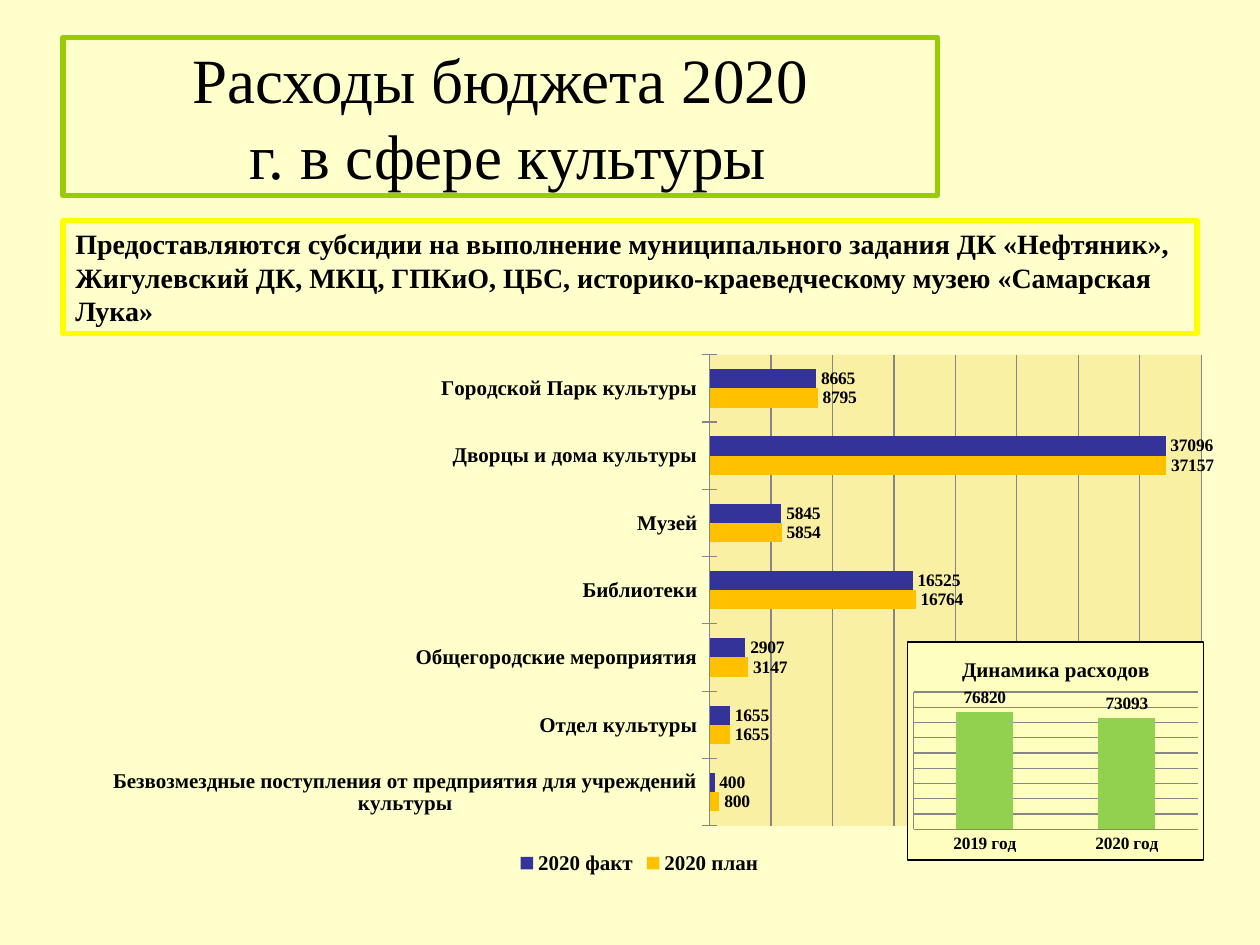
from lxml import etree
from pptx import Presentation
from pptx.chart.data import CategoryChartData
from pptx.dml.color import RGBColor
from pptx.enum.chart import XL_CHART_TYPE, XL_LABEL_POSITION, XL_LEGEND_POSITION, XL_TICK_LABEL_POSITION, XL_TICK_MARK
from pptx.enum.text import MSO_ANCHOR, PP_ALIGN
from pptx.oxml import parse_xml
from pptx.oxml.ns import nsdecls, qn
from pptx.util import Inches, Pt

BAR, COLUMN = XL_CHART_TYPE.BAR_CLUSTERED, XL_CHART_TYPE.COLUMN_CLUSTERED
OUTSIDE_END = XL_LABEL_POSITION.OUTSIDE_END
BOTTOM = XL_LEGEND_POSITION.BOTTOM
NO_LABELS = XL_TICK_LABEL_POSITION.NONE
CROSS, NO_TICK = XL_TICK_MARK.CROSS, XL_TICK_MARK.NONE
TOP, MIDDLE = MSO_ANCHOR.TOP, MSO_ANCHOR.MIDDLE
LEFT, CENTER = PP_ALIGN.LEFT, PP_ALIGN.CENTER

FONT = "Times New Roman"
BLACK = RGBColor(0x00, 0x00, 0x00)
CREAM = RGBColor(0xFF, 0xFF, 0xCC)
GREEN = RGBColor(0x99, 0xCC, 0x00)
YELLOW = RGBColor(0xFF, 0xFF, 0x00)
GRAY = RGBColor(0x86, 0x86, 0x86)
PLOT_SAND = RGBColor(0xFA, 0xF0, 0xA4)
AMBER = RGBColor(0xFF, 0xC0, 0x00)
INDIGO = RGBColor(0x33, 0x33, 0x99)
PALE_YELLOW = RGBColor(0xFE, 0xFE, 0xBE)
LIGHT_GREEN = RGBColor(0x92, 0xD0, 0x50)


def fill_box(shape, lines, size, bold, align, anchor, border):
    shape.line.color.rgb = border
    shape.line.width = Pt(3)
    frame = shape.text_frame
    frame.word_wrap = True
    frame.vertical_anchor = anchor
    paragraph = frame.paragraphs[0]
    paragraph.alignment = align
    for index, line in enumerate(lines):
        if index:
            paragraph.add_line_break()
        run = paragraph.add_run()
        run.text = line
        run.font.name = FONT
        run.font.size = Pt(size)
        run.font.bold = bold
        run.font.color.rgb = BLACK


def add_budget_chart(kind, box, categories, series, layout, maximum, step):
    data = CategoryChartData(number_format="0")
    data.categories = categories
    for name, values, color in series:
        data.add_series(name, values)
    chart = slide.shapes.add_chart(kind, *map(Inches, box), data).chart
    chart.font.name = FONT
    chart.font.size = Pt(10)
    chart.font.color.rgb = BLACK
    chart.has_legend = False
    chart.has_title = False
    plot = chart.plots[0]
    plot.gap_width = 150
    plot.overlap = 0
    plot.vary_by_categories = False
    for plot_series, (name, values, color) in zip(plot.series, series):
        plot_series.format.fill.solid()
        plot_series.format.fill.fore_color.rgb = color
        labels = plot_series.data_labels
        labels.show_value = True
        labels.position = OUTSIDE_END
        labels.font.bold = True
        labels.font.size = Pt(10)
    value_axis = chart.value_axis
    value_axis.minimum_scale = 0
    value_axis.maximum_scale = maximum
    value_axis.major_unit = step
    value_axis.has_major_gridlines = True
    category_axis = chart.category_axis
    category_axis.tick_labels.font.bold = True
    for line_format in (value_axis.format, category_axis.format, value_axis.major_gridlines.format):
        line_format.line.color.rgb = GRAY
        line_format.line.width = Pt(0.75)
    plot_area = chart.element.find(".//" + qn("c:plotArea"))
    for old_layout in plot_area.findall(qn("c:layout")):
        plot_area.remove(old_layout)
    manual_layout = parse_xml(
        f'<c:layout {nsdecls("c")}><c:manualLayout><c:layoutTarget val="inner"/>'
        '<c:xMode val="edge"/><c:yMode val="edge"/></c:manualLayout></c:layout>')
    for tag, value in zip("xywh", layout):
        etree.SubElement(manual_layout[0], qn("c:" + tag)).set("val", str(value))
    plot_area.insert(0, manual_layout)
    return chart


presentation = Presentation()
presentation.slide_width = Inches(10)
presentation.slide_height = Inches(7.5)
slide = presentation.slides.add_slide(presentation.slide_layouts[5])
slide.background.fill.solid()
slide.background.fill.fore_color.rgb = CREAM

title = slide.shapes.title
title.left, title.top, title.width, title.height = map(Inches, (0.5, 0.3, 6.94, 1.25))
fill_box(title, ["Расходы бюджета 2020", " г. в сфере культуры"], 36, False, CENTER, MIDDLE, GREEN)

subsidies = slide.shapes.add_textbox(*map(Inches, (0.5, 1.75, 9, 0.9)))
fill_box(subsidies, [
    "Предоставляются субсидии на выполнение муниципального задания ДК «Нефтяник», "
    "Жигулевский ДК, МКЦ, ГПКиО, ЦБС, историко-краеведческому музею «Самарская Лука»",
], 16, True, LEFT, TOP, YELLOW)

spending = [
    ("Безвозмездные поступления от предприятия для учреждений культуры", 800, 400),
    ("Отдел культуры", 1655, 1655),
    ("Общегородские мероприятия", 3147, 2907),
    ("Библиотеки", 16764, 16525),
    ("Музей", 5854, 5845),
    ("Дворцы и дома культуры", 37157, 37096),
    ("Городской Парк культуры", 8795, 8665),
]
categories, planned, actual = zip(*spending)
spending_chart = add_budget_chart(
    BAR, (0.43, 2.73, 9.29, 4.25), categories,
    [("2020 план", planned, AMBER), ("2020 факт", actual, INDIGO)],
    (0.56, 0.02, 0.42, 0.88), 40000, 5000)
spending_chart.value_axis.visible = False
spending_chart.category_axis.major_tick_mark = CROSS
spending_chart.category_axis.tick_labels.font.size = Pt(12)
spending_chart.has_legend = True
spending_chart.legend.position = BOTTOM
spending_chart.legend.include_in_layout = False
spending_chart.legend.font.size = Pt(12)
spending_chart.legend.font.bold = True
plot_area = spending_chart.element.find(".//" + qn("c:plotArea"))
plot_area.append(parse_xml(
    f'<c:spPr {nsdecls("c", "a")}><a:solidFill><a:srgbClr val="{PLOT_SAND}"/></a:solidFill></c:spPr>'))

trend_chart = add_budget_chart(
    COLUMN, (7.2, 5.09, 2.36, 1.74), ["2019 год", "2020 год"],
    [("Series 1", (76820, 73093), LIGHT_GREEN)],
    (0.02, 0.23, 0.96, 0.63), 90000, 10000)
trend_chart.value_axis.tick_label_position = NO_LABELS
trend_chart.value_axis.major_tick_mark = NO_TICK
trend_chart.category_axis.major_tick_mark = NO_TICK
trend_chart.category_axis.tick_labels.font.size = Pt(10)
trend_chart.has_title = True
trend_title = trend_chart.chart_title.text_frame.paragraphs[0].add_run()
trend_title.text = "Динамика расходов"
trend_title.font.name = FONT
trend_title.font.size = Pt(12)
trend_title.font.bold = True
trend_title.font.color.rgb = BLACK
trend_chart.chart_title.include_in_layout = False
trend_chart.element.find(qn("c:chart")).addnext(parse_xml(
    f'<c:spPr {nsdecls("c", "a")}><a:solidFill><a:srgbClr val="{PALE_YELLOW}"/></a:solidFill>'
    f'<a:ln w="9525"><a:solidFill><a:srgbClr val="{BLACK}"/></a:solidFill></a:ln></c:spPr>'))

presentation.save("out.pptx")
